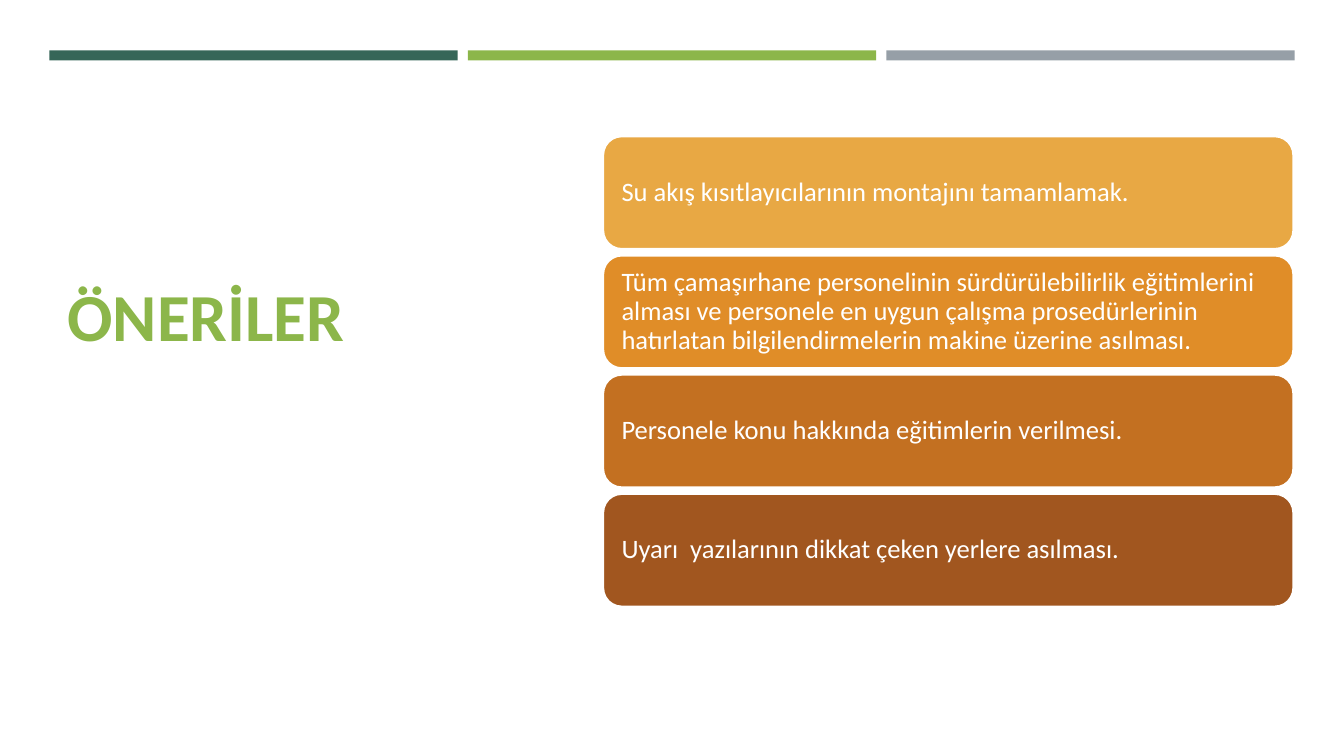
from pptx import Presentation
from pptx.dml.color import RGBColor
from pptx.enum.shapes import MSO_SHAPE
from pptx.enum.text import MSO_ANCHOR, MSO_AUTO_SIZE, PP_ALIGN
from pptx.util import Inches, Pt

RECTANGLE = MSO_SHAPE.RECTANGLE
ROUNDED = MSO_SHAPE.ROUNDED_RECTANGLE
MIDDLE = MSO_ANCHOR.MIDDLE
LEFT = PP_ALIGN.LEFT
NO_AUTOFIT = MSO_AUTO_SIZE.NONE
TITLE_ONLY = 5
FONT = "Calibri"
WHITE = "FFFFFF"
GREEN = "8CB64A"

STRIPES = ["366658", GREEN, "969FA7"]
SUGGESTIONS = [
    ("Su akış kısıtlayıcılarının montajını tamamlamak.", "E8A844"),
    ("Tüm çamaşırhane personelinin sürdürülebilirlik eğitimlerini alması ve "
     "personele en uygun çalışma prosedürlerinin hatırlatan "
     "bilgilendirmelerin makine üzerine asılması.", "E08D28"),
    ("Personele konu hakkında eğitimlerin verilmesi.", "C37021"),
    ("Uyarı  yazılarının dikkat çeken yerlere asılması.", "A1561F"),
]


def color(value):
    return RGBColor.from_string(value)


def add_block(page, kind, box, fill):
    block = page.shapes.add_shape(kind, *[Inches(length) for length in box])
    block.shadow.inherit = False
    block.fill.solid()
    block.fill.fore_color.rgb = color(fill)
    block.line.fill.background()
    return block


def write(shape, text, size, tint, insets, bold=False):
    frame = shape.text_frame
    frame.word_wrap = True
    frame.auto_size = NO_AUTOFIT
    frame.vertical_anchor = MIDDLE
    (frame.margin_left, frame.margin_top,
     frame.margin_right, frame.margin_bottom) = [Inches(inset) for inset in insets]
    para = frame.paragraphs[0]
    para.alignment = LEFT
    para.line_spacing = 0.9
    span = para.add_run()
    span.text = text
    span.font.name = FONT
    span.font.size = Pt(size)
    span.font.bold = bold
    span.font.color.rgb = color(tint)


def add_stripes(page, box, gap=0.1):
    left, top, width, height = box
    column = (width - gap * (len(STRIPES) - 1)) / len(STRIPES)
    for index, fill in enumerate(STRIPES):
        add_block(page, RECTANGLE,
                  (left + index * (column + gap), top, column, height), fill)


def add_heading(page, box):
    title = page.shapes.title
    title.left, title.top, title.width, title.height = [
        Inches(length) for length in box]
    write(title, "ÖNERİLER", 48, GREEN, (0.1, 0.05, 0.1, 1.09), bold=True)


def add_suggestions(page, box, gap=0.06):
    left, top, width, height = box
    row = (height - gap * (len(SUGGESTIONS) - 1)) / len(SUGGESTIONS)
    for index, (text, fill) in enumerate(SUGGESTIONS):
        card = add_block(page, ROUNDED,
                         (left, top + index * (row + gap), width, row), fill)
        card.line.color.rgb = color(WHITE)
        card.line.width = Pt(1.75)
        write(card, text, 19, WHITE, (0.13, 0.08, 0.13, 0.08))


def main():
    deck = Presentation()
    deck.slide_width = Inches(13.33)
    deck.slide_height = Inches(7.5)
    page = deck.slides.add_slide(deck.slide_layouts[TITLE_ONLY])
    add_stripes(page, (0.49, 0.5, 12.35, 0.1))
    add_heading(page, (0.57, 0.68, 4.16, 6.02))
    add_suggestions(page, (5.98, 1.35, 6.85, 4.67))
    deck.save("out.pptx")


if __name__ == "__main__":
    main()
